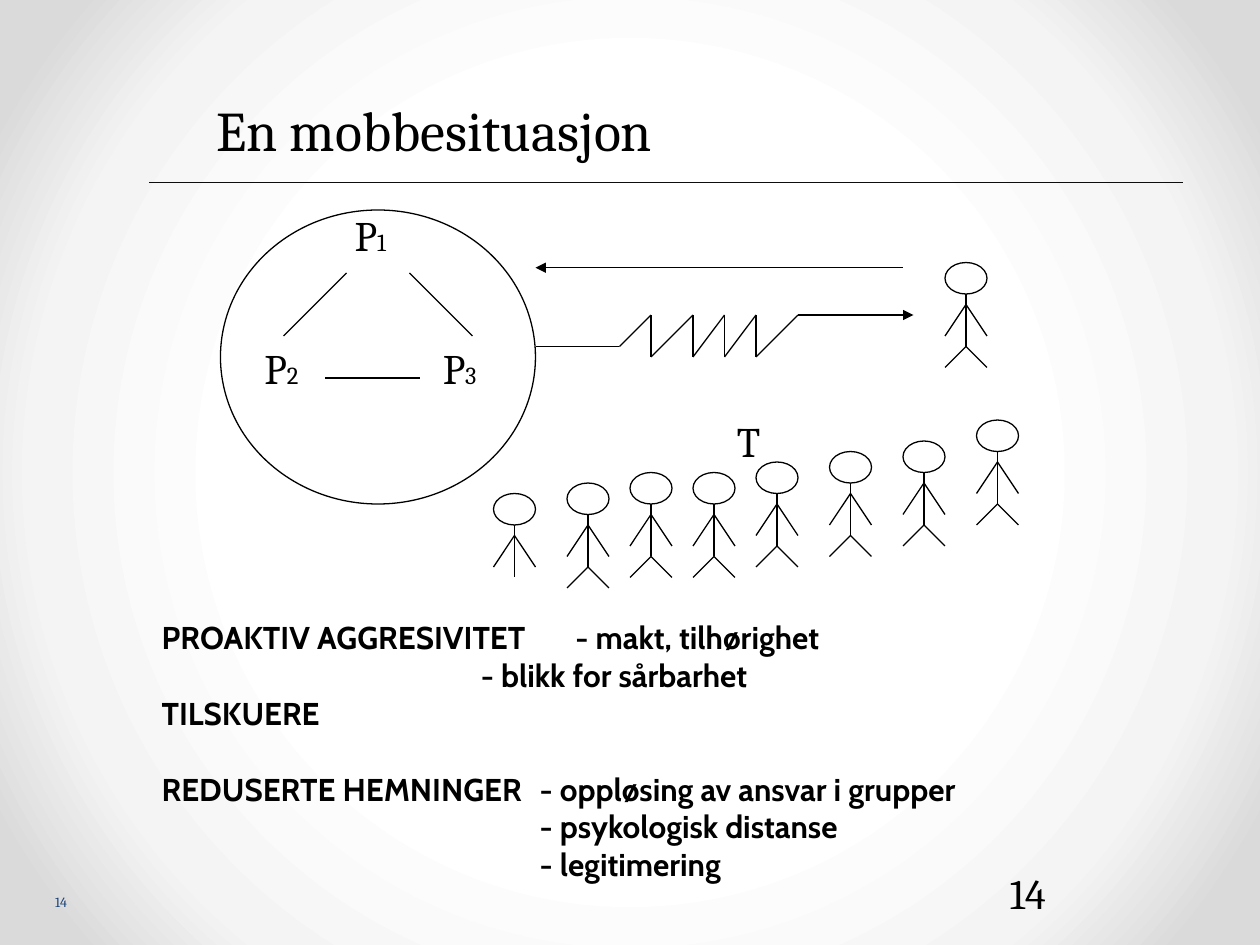
from itertools import pairwise

from pptx import Presentation
from pptx.dml.color import RGBColor
from pptx.enum.shapes import MSO_CONNECTOR, MSO_SHAPE
from pptx.enum.text import MSO_ANCHOR, PP_ALIGN
from pptx.oxml import parse_xml
from pptx.oxml.ns import nsdecls, qn
from pptx.util import Pt

LINE = MSO_CONNECTOR.STRAIGHT
OVAL = MSO_SHAPE.OVAL
LEFT, RIGHT = PP_ALIGN.LEFT, PP_ALIGN.RIGHT
TOP, BOTTOM = MSO_ANCHOR.TOP, MSO_ANCHOR.BOTTOM
PX = 7620  # 120 px to the inch
BLACK, WHITE = "000000", "FFFFFF"
SERIF, SANS = "Cambria", "Cabin"


def px(*nums):
    return [round(n * PX) for n in nums]


def color(code):
    return RGBColor.from_string(code)


def text(slide, box, paras, size=24, font=SERIF, ink=BLACK, bold=False,
         align=LEFT, anchor=TOP, inset=(12, 6)):
    """Each paragraph is a list of (words, size) runs or a plain string."""
    frame = slide.shapes.add_textbox(*px(*box)).text_frame
    frame.word_wrap = True
    frame.vertical_anchor = anchor
    frame.margin_left = frame.margin_right = inset[0] * PX
    frame.margin_top = frame.margin_bottom = inset[1] * PX
    for i, runs in enumerate(paras):
        para = frame.add_paragraph() if i else frame.paragraphs[0]
        para.alignment = align
        for words, pts in [(runs, size)] if isinstance(runs, str) else runs:
            run = para.add_run()
            run.text = words
            run.font.size = Pt(pts)
            run.font.name = font
            run.font.bold = bold
            run.font.color.rgb = color(ink)
    return frame


def line(slide, start, end, ink=BLACK, width=0.75, arrow=False):
    link = slide.shapes.add_connector(LINE, *px(*start, *end))
    link.line.color.rgb = color(ink)
    link.line.width = Pt(width)
    if arrow:
        link.line._get_or_add_ln().append(
            parse_xml(f'<a:tailEnd {nsdecls("a")} type="triangle"/>'))
    link._element.spPr.append(parse_xml(f'<a:effectLst {nsdecls("a")}/>'))


def oval(slide, box, fill=None):
    shape = slide.shapes.add_shape(OVAL, *px(*box))
    shape.shadow.inherit = False
    shape.line.color.rgb = color(BLACK)
    shape.line.width = Pt(0.75)
    if fill:
        shape.fill.solid()
        shape.fill.fore_color.rgb = color(fill)
    else:
        shape.fill.background()


def backdrop(slide):
    stops = "".join(
        f'<a:gs pos="{pos}000"><a:srgbClr val="{code}"/></a:gs>'
        for pos, code in [(50, WHITE), (76, "F4F4F4"), (92, "DADADA")])
    slide.background.fill.gradient()
    old = slide._element.find(".//" + qn("a:gradFill"))
    old.getparent().replace(old, parse_xml(
        f'<a:gradFill {nsdecls("a")} rotWithShape="1"><a:gsLst>{stops}</a:gsLst>'
        '<a:path path="circle"><a:fillToRect l="50000" t="50000" r="50000" '
        'b="50000"/></a:path></a:gradFill>'))


def header(slide, x, y):
    text(slide, (x + 52, y, 832, 77), ["En mobbesituasjon"], size=32)
    line(slide, (x, y + 89), (x + 985, y + 89), ink="0D0D0D", width=0.25)


def group(slide, x, y):
    """Circle with three linked persons."""
    oval(slide, (x, y, 300, 280))
    for dx, dy, width, num in [(116, -6, 70, "1"), (30, 120, 90, "2"),
                               (200, 120, 70, "3")]:
        text(slide, (x + dx, y + dy, width, 60), [[("P", 24), (num, 14)]])
    for ax, ay, bx, by in [(60, 120, 120, 60), (100, 160, 190, 160),
                           (180, 60, 240, 120)]:
        line(slide, (x + ax, y + ay), (x + bx, y + by))


def signals(slide, x, y):
    """Arrow back to the group, and a jagged arrow out of it."""
    line(slide, (x + 350, y), (x, y), arrow=True)
    high, low = y + 45, y + 85
    path = [(x, y + 75), (x + 80, y + 75)]
    for dx in (110, 150, 180, 210):
        path += [(x + dx, high), (x + dx, low)]
    path.append((x + 250, high))
    for start, end in pairwise(path):
        line(slide, start, end)
    line(slide, path[-1], (x + 360, high), arrow=True)


def person(slide, x, y, legs=True):
    """Stick figure with the top of its head at x, y."""
    line(slide, (x, y + 30), (x, y + 80))
    for side in (-20, 20):
        line(slide, (x, y + 40), (x + side, y + 70))
        if legs:
            line(slide, (x, y + 80), (x + side, y + 100))
    oval(slide, (x - 20, y, 40, 30), fill=WHITE)


def crowd(slide, x, y):
    spots = [(0, 70), (70, 60), (130, 50), (190, 50),
             (250, 40), (320, 30), (390, 20), (460, 0)]
    for i, (dx, dy) in enumerate(spots):
        person(slide, x + dx, y + dy, legs=i > 0)
    text(slide, (x + 200, y - 10, 50, 60), ["T"])


def notions(slide, box):
    """Terms at the left, their points at a tab stop."""
    rows = [("PROAKTIV AGGRESIVITET\t- makt, tilhørighet", 394),
            ("\t- blikk for sårbarhet", 304),
            ("TILSKUERE", 0),
            ("REDUSERTE HEMNINGER\t- oppløsing av ansvar i grupper", 360),
            ("\t- psykologisk distanse", 360),
            ("\t- legitimering", 360)]
    frame = text(slide, box, [words for words, _ in rows], size=18, font=SANS,
                 bold=True, anchor=BOTTOM, inset=(0, 0))
    frame.paragraphs[3].space_before = Pt(21.7)
    for para, (_, stop) in zip(frame.paragraphs, rows):
        if stop:
            para._p.get_or_add_pPr().append(parse_xml(
                f'<a:tabLst {nsdecls("a")}>'
                f'<a:tab pos="{stop * PX}" algn="l"/></a:tabLst>'))


def footer(slide, y):
    text(slide, (14, y + 31, 50, 16), ["14"], size=8, ink="194377",
         align=RIGHT, inset=(0, 0))
    text(slide, (950, y, 250, 60), ["14"])


def main():
    deck = Presentation()
    deck.slide_width, deck.slide_height = px(1200, 900)
    slide = deck.slides.add_slide(deck.slide_layouts[6])
    backdrop(slide)
    header(slide, 142, 85)
    notions(slide, (154, 550, 1046, 291))
    group(slide, 210, 200)
    signals(slide, 510, 255)
    person(slide, 920, 250)
    crowd(slide, 490, 400)
    footer(slide, 820)
    deck.save("out.pptx")


if __name__ == "__main__":
    main()
